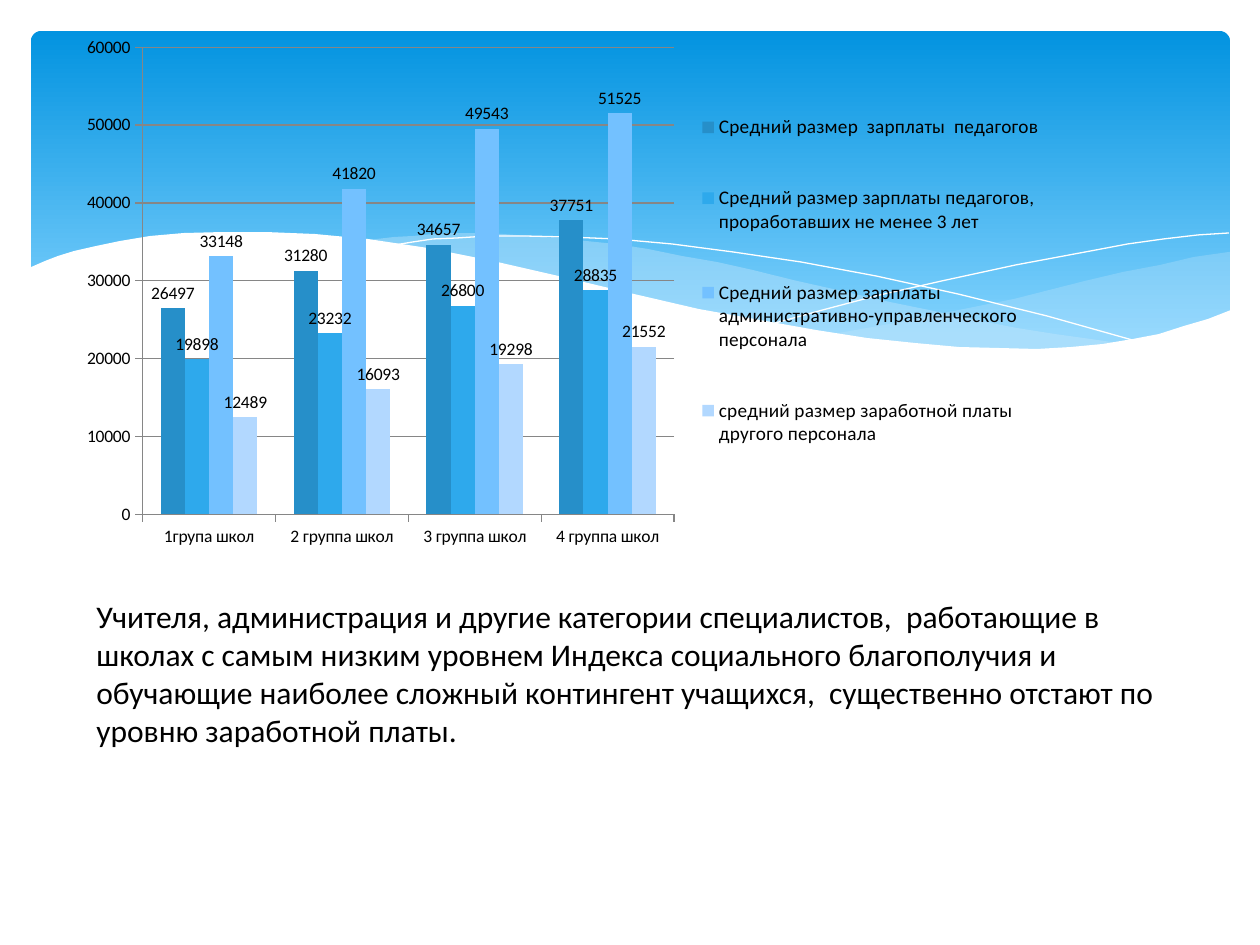
from dataclasses import dataclass

from lxml.etree import SubElement
from pptx import Presentation
from pptx.chart.data import CategoryChartData
from pptx.dml.color import RGBColor
from pptx.enum.chart import XL_CHART_TYPE as ChartType
from pptx.enum.chart import XL_LABEL_POSITION as LabelPosition
from pptx.enum.chart import XL_LEGEND_POSITION as LegendPosition
from pptx.enum.chart import XL_TICK_MARK as TickMark
from pptx.enum.shapes import MSO_SHAPE as Preset
from pptx.enum.text import MSO_AUTO_SIZE as AutoSize
from pptx.oxml import parse_xml
from pptx.oxml.ns import nsdecls, qn
from pptx.util import Pt

PX = 7257


@dataclass(frozen=True)
class Theme:
    """Colours, font and type sizes of the slide."""

    font: str = "Calibri"
    text: str = "000000"
    white: str = "FFFFFF"
    sky_top: str = "0293E0"
    sky_bottom: str = "83D3FE"
    wave: str = "C6E7FC"
    axis: str = "868686"
    series: tuple = ("268FC9", "2EA9EC", "73C1FF", "B2D8FF")
    chart_size: int = 10
    legend_size: int = 11
    body_size: int = 18


THEME = Theme()

RIGHT_WAVE = [
    (1229, 252), (1194, 257), (1160, 265), (1123, 272), (1085, 281), (1014, 299),
    (949, 312), (890, 324), (833, 334), (871, 339), (906, 343), (939, 346),
    (969, 349), (1012, 350), (1052, 349), (1087, 346), (1120, 343), (1150, 336),
    (1178, 330), (1196, 324), (1213, 318), (1230, 311), (1230, 252),
]
MIDDLE_WAVE = [
    (1125, 344), (1091, 339), (1055, 334), (1017, 328), (976, 320), (934, 311),
    (890, 302), (842, 291), (793, 280), (753, 270), (717, 262), (682, 256),
    (648, 249), (616, 244), (586, 241), (557, 238), (529, 236), (503, 234),
    (479, 233), (455, 233), (433, 234), (413, 236), (394, 237), (360, 241),
    (407, 247), (456, 256), (509, 266), (566, 280), (619, 292), (668, 302),
    (713, 312), (757, 321), (799, 329), (838, 335), (876, 340), (910, 345),
    (942, 348), (974, 349), (1017, 350), (1056, 350), (1092, 348),
]
FALLING_LINE = [
    (389, 246), (413, 242), (433, 239), (457, 238), (488, 236), (524, 236),
    (567, 237), (616, 239), (672, 244), (733, 252), (801, 262), (876, 276),
    (958, 294), (1047, 316), (1143, 343),
]
RISING_LINE = [
    (772, 324), (823, 310), (876, 296), (942, 281), (1016, 265), (1091, 251),
    (1128, 244), (1164, 239), (1198, 235), (1229, 233),
]
WHITE_WAVE = [
    (1231, 310), (1208, 319), (1184, 326), (1159, 334), (1133, 339), (1103, 344),
    (1071, 347), (1037, 349), (999, 348), (959, 347), (915, 343), (867, 338),
    (816, 330), (760, 320), (699, 309), (634, 294), (563, 277), (493, 261),
    (428, 248), (368, 239), (315, 234), (266, 232), (223, 232), (184, 233),
    (150, 236), (120, 241), (96, 246), (74, 251), (58, 256), (45, 261),
    (29, 268), (29, 415), (1231, 415),
]

CATEGORIES = ["1група школ", "2 группа школ", "3 группа школ", "4 группа школ"]
SALARIES = {
    "Средний размер  зарплаты  педагогов": (26497, 31280, 34657, 37751),
    "Средний размер зарплаты педагогов, проработавших не менее 3 лет": (19898, 23232, 26800, 28835),
    "Средний размер зарплаты  административно-управленческого персонала": (33148, 41820, 49543, 51525),
    "средний размер заработной платы другого персонала": (12489, 16093, 19298, 21552),
}
CONCLUSION = (
    "Учителя, администрация и другие категории специалистов,  работающие в школах "
    "с самым низким уровнем Индекса социального благополучия и обучающие наиболее "
    "сложный контингент учащихся,  существенно отстают по уровню заработной платы."
)


def rgb(value):
    """Turn a hex string into a colour."""
    return RGBColor.from_string(value)


def px(*lengths):
    """Turn pixel lengths into EMU."""
    return [length * PX for length in lengths]


def set_font(font, size):
    """Apply the theme font in a given size."""
    font.name, font.size = THEME.font, Pt(size)
    font.color.rgb = rgb(THEME.text)


def add_sky(slide):
    """Add the rounded gradient panel."""
    shape = slide.shapes.add_shape(Preset.ROUNDED_RECTANGLE, *px(31, 31, 1199, 340))
    shape.shadow.inherit = False
    shape.adjustments[0] = 0.03
    shape.line.fill.background()
    shape.fill.gradient()
    shape.fill.gradient_angle = 270
    stops = ((0, THEME.sky_top), (0.9, THEME.sky_bottom))
    for stop, (position, color) in zip(shape.fill.gradient_stops, stops):
        stop.position, stop.color.rgb = position, rgb(color)


def add_outline(slide, points, close):
    """Add a freeform through the points."""
    builder = slide.shapes.build_freeform(*points[0], scale=PX)
    builder.add_line_segments(points[1:], close=close)
    shape = builder.convert_to_shape()
    shape.shadow.inherit = False
    return shape


def add_wave(slide, points, color, opacity=100):
    """Add a filled wave."""
    shape = add_outline(slide, points, True)
    shape.line.fill.background()
    shape.fill.solid()
    shape.fill.fore_color.rgb = rgb(color)
    if opacity < 100:
        for node in shape.fill._xPr.iter(qn("a:srgbClr")):
            SubElement(node, qn("a:alpha"), val=str(opacity * 1000))


def add_wave_line(slide, points):
    """Add a white hairline curve."""
    shape = add_outline(slide, points, False)
    shape.fill.background()
    shape.line.color.rgb = rgb(THEME.white)
    shape.line.width = Pt(0)


def manual_layout(x, y, width, height, inner=False):
    """Make a chart layout element from fractions of the chart."""
    target = '<c:layoutTarget val="inner"/>' if inner else ""
    sizes = zip("xywh", (x, y, width, height))
    values = "".join(f'<c:{name} val="{value}"/>' for name, value in sizes)
    modes = '<c:xMode val="edge"/><c:yMode val="edge"/>'
    return parse_xml(
        f"<c:layout {nsdecls('c')}><c:manualLayout>{target}{modes}{values}</c:manualLayout></c:layout>"
    )


def style_axes(chart):
    """Style both axes and the gridlines."""
    value_axis = chart.value_axis
    value_axis.minimum_scale, value_axis.maximum_scale = 0, 60000
    value_axis.major_unit = 10000
    value_axis.has_major_gridlines = True
    for axis in (chart.category_axis, value_axis):
        axis.major_tick_mark = TickMark.OUTSIDE
        axis.format.line.color.rgb = rgb(THEME.axis)
        set_font(axis.tick_labels.font, THEME.chart_size)
    value_axis.major_gridlines.format.line.color.rgb = rgb(THEME.axis)


def style_series(plot):
    """Colour the columns and show their values."""
    plot.gap_width, plot.overlap, plot.vary_by_categories = 150, 0, False
    for series, color in zip(plot.series, THEME.series):
        series.format.fill.solid()
        series.format.fill.fore_color.rgb = rgb(color)
        labels = series.data_labels
        labels.show_value, labels.position = True, LabelPosition.OUTSIDE_END
        set_font(labels.font, THEME.chart_size)


def place_parts(chart):
    """Place the plot area and the legend."""
    plot_area = chart.plots[0]._element.getparent()
    for layout in plot_area.findall(qn("c:layout")):
        plot_area.remove(layout)
    plot_area.insert(0, manual_layout(0.08, 0.04, 0.54, 0.88, inner=True))
    legend = chart.legend._element
    for layout in legend.findall(qn("c:layout")):
        legend.remove(layout)
    legend.find(qn("c:legendPos")).addnext(manual_layout(0.64, 0.08, 0.36, 0.8))


def add_salary_chart(slide):
    """Add the clustered column chart of salaries."""
    data = CategoryChartData(number_format="General")
    data.categories = CATEGORIES
    for name, values in SALARIES.items():
        data.add_series(name, values)
    frame = slide.shapes.add_chart(ChartType.COLUMN_CLUSTERED, *px(64, 26, 984, 531), data)
    chart = frame.chart
    chart.has_title = False
    set_font(chart.font, THEME.chart_size)
    chart.has_legend = True
    chart.legend.position = LegendPosition.RIGHT
    chart.legend.include_in_layout = False
    set_font(chart.legend.font, THEME.legend_size)
    style_axes(chart)
    style_series(chart.plots[0])
    place_parts(chart)


def add_text(slide, text):
    """Add the concluding paragraph."""
    frame = slide.shapes.add_textbox(*px(84, 591, 1101, 204)).text_frame
    frame.word_wrap = True
    frame.auto_size = AutoSize.SHAPE_TO_FIT_TEXT
    run = frame.paragraphs[0].add_run()
    run.text = text
    set_font(run.font, THEME.body_size)


def main():
    """Build and save the slide."""
    presentation = Presentation()
    presentation.slide_width, presentation.slide_height = px(1260, 945)
    slide = presentation.slides.add_slide(presentation.slide_layouts[6])
    add_sky(slide)
    add_wave(slide, RIGHT_WAVE, THEME.wave, 29)
    add_wave(slide, MIDDLE_WAVE, THEME.wave, 40)
    add_wave_line(slide, FALLING_LINE)
    add_wave_line(slide, RISING_LINE)
    add_wave(slide, WHITE_WAVE, THEME.white)
    add_salary_chart(slide)
    add_text(slide, CONCLUSION)
    presentation.save("out.pptx")


if __name__ == "__main__":
    main()
